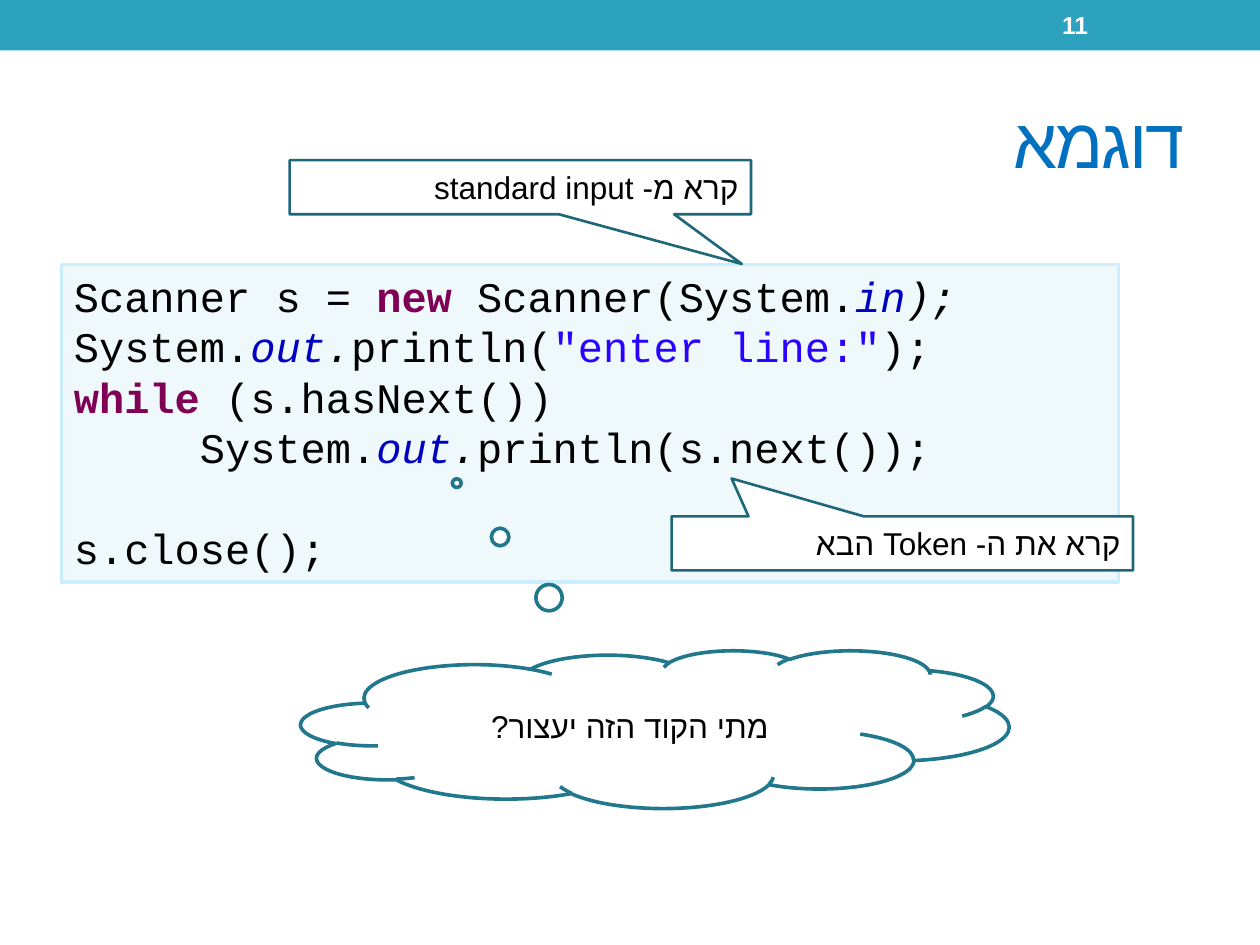
from pptx import Presentation
from pptx import util as u
from pptx.dml.color import RGBColor
from pptx.enum import shapes, text
from pptx.oxml.ns import qn

SHAPE = shapes.MSO_SHAPE
ALIGN = text.PP_ALIGN
PLAIN = {}
KEYWORD = {"color": "7F0055", "bold": True}
FIELD = {"color": "0000C0", "italic": True}
ITALIC = {"italic": True}
STRING = {"color": "2A00FF"}


def rgb(value):
    return RGBColor.from_string(value)


class SlideBuilder:
    sans, mono = "Arial", "Courier New"
    code_size, code_pitch = 24, 28.8
    code_indent = u.Cm(2.54)

    def __init__(self, prs):
        self.s = prs.slides.add_slide(prs.slide_layouts[6])

    def shape(self, kind, box, fill, line=None, width=1.5, adjust=()):
        sp = self.s.shapes.add_shape(kind, *map(u.Cm, box))
        sp.shadow.inherit = False
        for i, value in enumerate(adjust):
            sp.adjustments[i] = value
        sp.fill.solid()
        sp.fill.fore_color.rgb = rgb(fill)
        if line:
            sp.line.color.rgb = rgb(line)
            sp.line.width = u.Pt(width)
        else:
            sp.line.fill.background()
        return sp

    def run(self, p, words, font, size, color="000000", bold=False, italic=False):
        r = p.add_run()
        r.text = words
        f = r.font
        f.name, f.size, f.bold, f.italic = font, u.Pt(size), bold, italic
        f.color.rgb = rgb(color)
        return r

    def rtl_text(self, sp, words, size, align, **style):
        """Fill a shape with one right-to-left paragraph, centred vertically."""
        tf = sp.text_frame
        tf.word_wrap = True
        tf.vertical_anchor = text.MSO_ANCHOR.MIDDLE
        p = tf.paragraphs[0]
        p.alignment = align
        p._p.get_or_add_pPr().set("rtl", "1")
        r = self.run(p, words, self.sans, size, **style)
        cs = r._r.get_or_add_rPr().makeelement(qn("a:cs"), {"typeface": self.sans})
        r._r.rPr.append(cs)
        return r

    def label(self, box, words, size, align, **style):
        sp = self.s.shapes.add_textbox(*map(u.Cm, box))
        return self.rtl_text(sp, words, size, align, **style)

    def callout(self, kind, box, tip, words, line="1D6779", width=1.5, align=ALIGN.RIGHT):
        sp = self.shape(kind, box, "FFFFFF", line, width, tip)
        self.rtl_text(sp, words, 18, align)

    def code(self, box, lines):
        """Draw a code box; each line is (indent level, blank lines before, runs)."""
        tf = self.shape(SHAPE.RECTANGLE, box, "EFF8FB", "CCECFF", 2).text_frame
        tf.word_wrap = True
        tf.vertical_anchor = text.MSO_ANCHOR.TOP
        for i, (level, gap, runs) in enumerate(lines):
            p = tf.add_paragraph() if i else tf.paragraphs[0]
            p.alignment = ALIGN.LEFT
            p.line_spacing = u.Pt(self.code_pitch)
            p.space_before = u.Pt(gap * self.code_pitch)
            p._p.get_or_add_pPr().set("marL", str(level * self.code_indent))
            for words, style in runs:
                self.run(p, words, self.mono, self.code_size, **style)


def main():
    prs = Presentation()
    prs.slide_width, prs.slide_height = u.Cm(25.4), u.Cm(19.05)
    b = SlideBuilder(prs)

    b.shape(SHAPE.RECTANGLE, (0, 0, 25.4, 1.02), "2DA2BF")
    title = b.label((1.27, 1.47, 22.86, 2.74), "דוגמא", 40, ALIGN.RIGHT, color="0070C0")
    title._r.rPr.set("spc", "-100")
    b.label((21.16, 0.05, 2.97, 0.91), "11", 14, ALIGN.LEFT, color="FFFFFF", bold=True)

    system_out = [("System.", PLAIN), ("out", FIELD), (".", ITALIC)]
    b.code((1.24, 5.33, 21.31, 6.4), [
        (0, 0, [("Scanner s = ", PLAIN), ("new ", KEYWORD), ("Scanner(System.", PLAIN),
                ("in", FIELD), (");", ITALIC)]),
        (0, 0, system_out + [("println(", PLAIN), ('"enter line:"', STRING), (");", PLAIN)]),
        (0, 0, [("while ", KEYWORD), ("(s.hasNext())", PLAIN)]),
        (1, 0, system_out + [("println(s.next());", PLAIN)]),
        (0, 1, [("s.close();", PLAIN)]),
    ])

    box_callout = SHAPE.RECTANGULAR_CALLOUT
    b.callout(box_callout, (5.84, 3.23, 9.3, 1.09), (0.48, 1.42), "קרא מ- standard input")
    b.callout(box_callout, (13.54, 10.41, 9.3, 1.09), (-0.37, -1.2), "קרא את ה- Token הבא")
    b.callout(SHAPE.CLOUD_CALLOUT, (6.07, 13.11, 14.27, 3.18), (-0.28, -1.56),
              "מתי הקוד הזה יעצור?", "21788D", 2.08, ALIGN.CENTER)

    prs.save("out.pptx")


if __name__ == "__main__":
    main()
